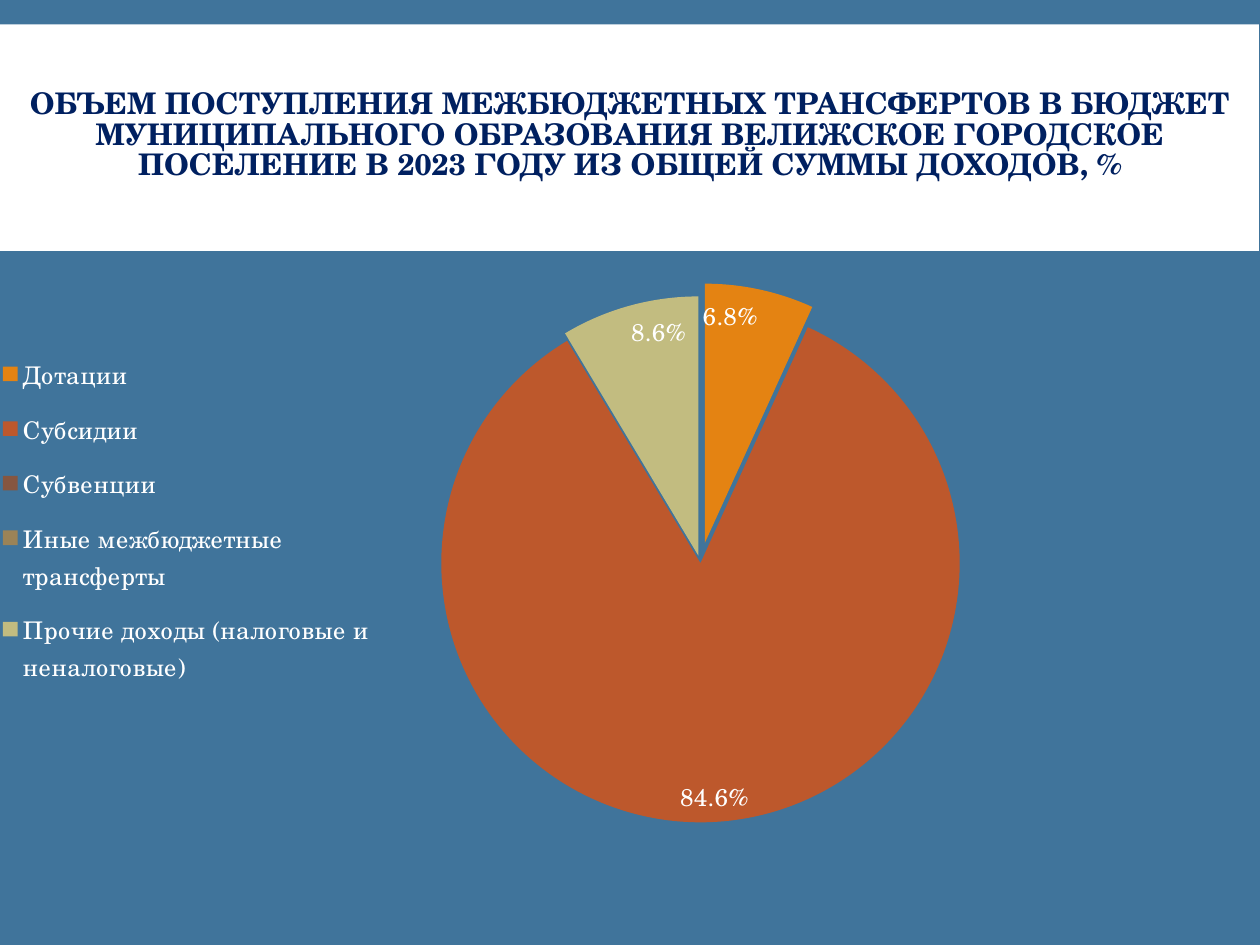
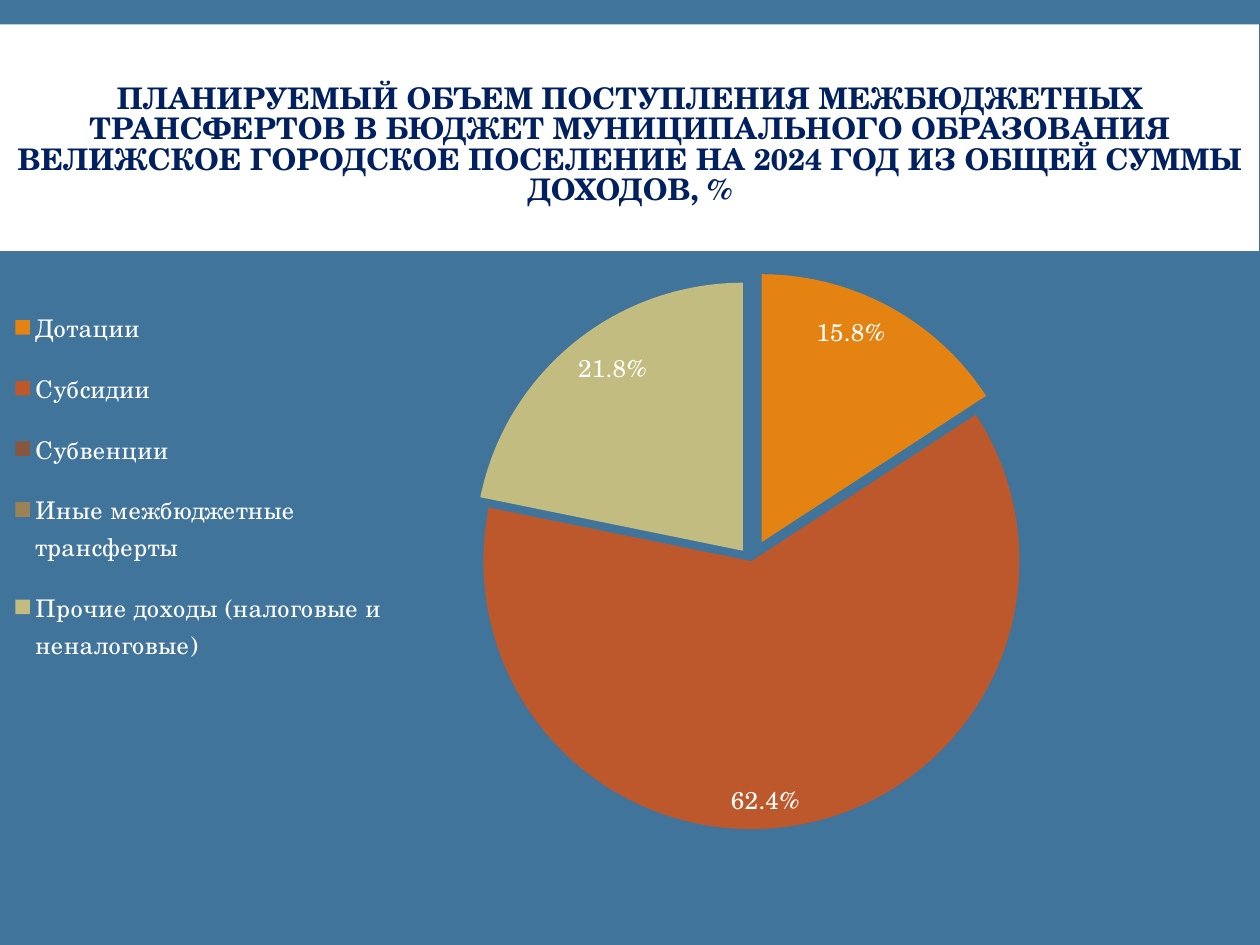
from dataclasses import dataclass

from pptx import Presentation
from pptx.chart.data import CategoryChartData
from pptx.dml.color import RGBColor
from pptx.enum.chart import XL_CHART_TYPE, XL_LABEL_POSITION, XL_LEGEND_POSITION
from pptx.enum.shapes import MSO_SHAPE
from pptx.enum.text import MSO_ANCHOR, PP_ALIGN
from pptx.oxml import parse_xml
from pptx.oxml.ns import nsdecls
from pptx.util import Cm, Pt


@dataclass(frozen=True)
class Theme:
    background: str = "40749B"
    band: str = "FFFFFF"
    title: str = "002060"
    chart_text: str = "FFFFFF"
    slices: tuple = ("E48312", "BD582C", "865640", "9B8357", "C2BC80")
    font: str = "TeX Gyre Schola"
    chart_font: str = "Calibri"
    title_size: float = 17
    chart_size: float = 10
    label_size: float = 13.9


INCOME_SOURCES = (
    "Дотации",
    "Субсидии",
    "Субвенции ",
    "Иные межбюджетные трансферты",
    "Прочие доходы (налоговые и неналоговые)",
)

YEARS = (
    {
        "title": "ОБЪЕМ ПОСТУПЛЕНИЯ МЕЖБЮДЖЕТНЫХ ТРАНСФЕРТОВ В БЮДЖЕТ "
                 "МУНИЦИПАЛЬНОГО ОБРАЗОВАНИЯ ВЕЛИЖСКОЕ ГОРОДСКОЕ ПОСЕЛЕНИЕ "
                 "В 2023 ГОДУ ИЗ ОБЩЕЙ СУММЫ ДОХОДОВ, %",
        "title_top": 1.07,
        "shares": (0.068, 0.846, 0, 0, 0.086),
        "explosions": {0: 8, 4: 3},
        "pie_area": (0.355, 0.077, 0.418, 0.768),
        "legend_area": (0, 0.127, 0.3, 0.54),
    },
    {
        "title": "ПЛАНИРУЕМЫЙ ОБЪЕМ ПОСТУПЛЕНИЯ МЕЖБЮДЖЕТНЫХ ТРАНСФЕРТОВ "
                 "В БЮДЖЕТ МУНИЦИПАЛЬНОГО ОБРАЗОВАНИЯ ВЕЛИЖСКОЕ ГОРОДСКОЕ "
                 "ПОСЕЛЕНИЕ НА 2024 ГОД ИЗ ОБЩЕЙ СУММЫ ДОХОДОВ, %",
        "title_top": 1.47,
        "shares": (0.158, 0.624, 0, 0, 0.218),
        "explosions": {0: 8, 4: 5},
        "pie_area": (0.389, 0.061, 0.432, 0.794),
        "legend_area": (0.01, 0.049, 0.3, 0.594),
    },
)


def style_font(font, name, size, color, bold=False):
    font.name = name
    font.size = Pt(size)
    font.bold = bold
    font.color.rgb = RGBColor.from_string(color)


def write_text(frame, text, *, align=PP_ALIGN.LEFT, spacing=1.0, **font_format):
    paragraph = frame.paragraphs[0]
    paragraph.alignment = align
    paragraph.line_spacing = spacing
    run = paragraph.add_run()
    run.text = text
    style_font(run.font, **font_format)


def manual_layout(area, inner=False):
    target = '<c:layoutTarget val="inner"/>' if inner else ""
    modes = "".join(f'<c:{axis}Mode val="edge"/>' for axis in "xy")
    sizes = "".join(f'<c:{key} val="{value}"/>' for key, value in zip("xywh", area))
    return parse_xml(
        f'<c:layout {nsdecls("c")}><c:manualLayout>{target}{modes}{sizes}'
        "</c:manualLayout></c:layout>"
    )


class BudgetDeck:
    def __init__(self, theme):
        self.theme = theme
        self.presentation = Presentation()
        self.presentation.slide_width = Cm(25.4)
        self.presentation.slide_height = Cm(19.05)
        self.slide = None

    def new_slide(self):
        self.slide = self.presentation.slides.add_slide(self.presentation.slide_layouts[6])
        fill = self.slide.background.fill
        fill.solid()
        fill.fore_color.rgb = RGBColor.from_string(self.theme.background)

    def band(self):
        band = self.slide.shapes.add_shape(
            MSO_SHAPE.RECTANGLE, 0, Cm(0.49), Cm(25.38), Cm(4.57)
        )
        band.shadow.inherit = False
        band.fill.solid()
        band.fill.fore_color.rgb = RGBColor.from_string(self.theme.band)
        band.line.fill.background()

    def title(self, text, top, bottom=4.42):
        heading = self.slide.shapes.add_textbox(0, Cm(top), Cm(25.4), Cm(bottom - top))
        frame = heading.text_frame
        frame.word_wrap = True
        frame.vertical_anchor = MSO_ANCHOR.MIDDLE
        write_text(
            frame, text, align=PP_ALIGN.CENTER, spacing=0.85, name=self.theme.font,
            size=self.theme.title_size, color=self.theme.title, bold=True,
        )

    def pie(self, shares, explosions, pie_area, legend_area):
        theme = self.theme
        income = CategoryChartData(number_format="0.0%")
        income.categories = INCOME_SOURCES
        income.add_series("Series 1", shares)
        chart = self.slide.shapes.add_chart(
            XL_CHART_TYPE.PIE, 0, Cm(5.08), Cm(25.04), Cm(13.61), income
        ).chart
        chart.has_title = False
        style_font(chart.font, theme.chart_font, theme.chart_size, theme.chart_text)

        plot = chart.plots[0]
        plot.vary_by_categories = True
        self.slices(plot.series[0], explosions)
        self.labels(plot.series[0], shares)
        self.legend(chart, legend_area)

        plot_area = chart._chartSpace.chart.plotArea
        for layout in plot_area.xpath("c:layout"):
            plot_area.remove(layout)
        plot_area.insert(0, manual_layout(pie_area, inner=True))

    def slices(self, series, explosions):
        for index, color in enumerate(self.theme.slices):
            point = series.points[index]
            point.format.fill.solid()
            point.format.fill.fore_color.rgb = RGBColor.from_string(color)
            point.format.line.fill.background()
            if index in explosions:
                explosion = parse_xml(
                    f'<c:explosion {nsdecls("c")} val="{explosions[index]}"/>'
                )
                data_point = series._element.xpath(f"c:dPt[c:idx/@val={index}]")[0]
                data_point.xpath("c:spPr")[0].addprevious(explosion)

    def labels(self, series, shares):
        labels = series.data_labels
        labels.show_value = True
        labels.number_format = "0.0%"
        labels.number_format_is_linked = False
        labels.position = XL_LABEL_POSITION.INSIDE_END
        style_font(labels.font, self.theme.font, self.theme.label_size, self.theme.chart_text)
        empty = [index for index, share in enumerate(shares) if not share]
        for position, index in enumerate(empty):
            labels._element.insert(position, parse_xml(
                f'<c:dLbl {nsdecls("c")}><c:idx val="{index}"/><c:delete val="1"/></c:dLbl>'
            ))

    def legend(self, chart, area):
        chart.has_legend = True
        legend = chart.legend
        legend.position = XL_LEGEND_POSITION.BOTTOM
        legend.include_in_layout = False
        style_font(legend.font, self.theme.font, self.theme.label_size, self.theme.chart_text)
        for layout in legend._element.xpath("c:layout"):
            legend._element.remove(layout)
        legend._element.xpath("c:legendPos")[0].addnext(manual_layout(area))


def main():
    deck = BudgetDeck(Theme())
    for year in YEARS:
        deck.new_slide()
        deck.band()
        deck.title(year["title"], year["title_top"])
        deck.pie(year["shares"], year["explosions"], year["pie_area"], year["legend_area"])
    deck.presentation.save("out.pptx")


if __name__ == "__main__":
    main()
